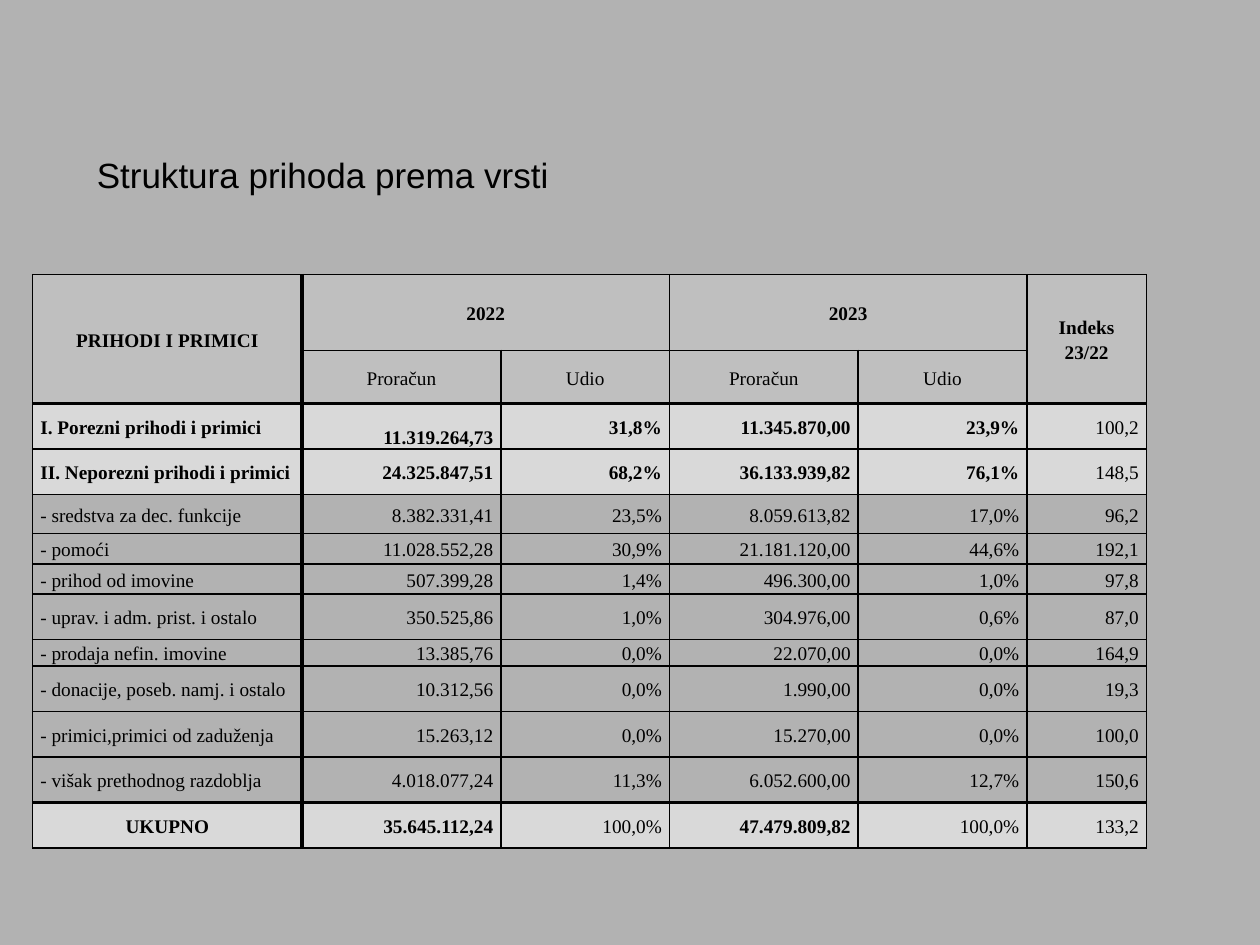
from lxml.etree import SubElement
from pptx import Presentation
from pptx.dml.color import RGBColor
from pptx.enum.text import MSO_ANCHOR as Anchor, PP_ALIGN as Align
from pptx.oxml.ns import qn
from pptx.util import Inches, Pt

WIDE, HIGH = Inches(10), Inches(7.5)
BACK, HEAD, BAND, INK = "B2B2B2", "BFBFBF", "D9D9D9", "000000"
THIN, THICK = 1, 2.25

COLS = [2.14, 1.58, 1.34, 1.5, 1.34, 0.95]
ROWS = [0.6, 0.26, 0.36, 0.36, 0.31, 0.24, 0.24, 0.36, 0.2] + [0.36] * 4
SPANS = [(0, 0, 1, 0), (0, 1, 0, 2), (0, 3, 0, 4), (0, 5, 1, 5)]
DATA = [
    ["PRIHODI I PRIMICI", "2022", "", "2023", "", "Indeks 23/22"],
    ["", "Proračun", "Udio", "Proračun", "Udio", ""],
    ["I. Porezni prihodi i primici", "11.319.264,73", "31,8%", "11.345.870,00", "23,9%", "100,2"],
    ["II. Neporezni prihodi i primici", "24.325.847,51", "68,2%", "36.133.939,82", "76,1%", "148,5"],
    ["- sredstva za dec. funkcije", "8.382.331,41", "23,5%", "8.059.613,82", "17,0%", "96,2"],
    ["- pomoći", "11.028.552,28", "30,9%", "21.181.120,00", "44,6%", "192,1"],
    ["- prihod od imovine", "507.399,28", "1,4%", "496.300,00", "1,0%", "97,8"],
    ["- uprav. i adm. prist. i ostalo", "350.525,86", "1,0%", "304.976,00", "0,6%", "87,0"],
    ["- prodaja nefin. imovine", "13.385,76", "0,0%", "22.070,00", "0,0%", "164,9"],
    ["- donacije, poseb. namj. i ostalo", "10.312,56", "0,0%", "1.990,00", "0,0%", "19,3"],
    ["- primici,primici od zaduženja", "15.263,12", "0,0%", "15.270,00", "0,0%", "100,0"],
    ["- višak prethodnog razdoblja", "4.018.077,24", "11,3%", "6.052.600,00", "12,7%", "150,6"],
    ["UKUPNO", "35.645.112,24", "100,0%", "47.479.809,82", "100,0%", "133,2"],
]
LAST = len(DATA) - 1
# Columns set in bold, by row
BOLD = {0: range(6), 2: range(5), 3: range(5), LAST: (0, 1, 3)}


def color(code):
    return RGBColor.from_string(code)


def style(para, font, size, bold=False):
    for run in para.runs:
        run.font.name, run.font.size, run.font.bold = font, Pt(size), bold
        run.font.color.rgb = color(INK)


def edge(cell, side, width):
    line = SubElement(cell._tc.get_or_add_tcPr(), qn("a:ln" + side), w=str(Pt(width)))
    fill = SubElement(line, qn("a:solidFill"))
    SubElement(fill, qn("a:srgbClr"), val=INK)


def rule(cell, row, col):
    """Heavy rules: beside the labels, below the header, above the total."""
    end = row + cell.span_height - 1
    heavy = {"L": col == 1, "R": col == 0,
             "T": row in (2, LAST), "B": end in (1, LAST - 1)}
    for side, thick in heavy.items():
        edge(cell, side, THICK if thick else THIN)


def shade(cell, row):
    if row < 2 or row in (2, 3, LAST):
        cell.fill.solid()
        cell.fill.fore_color.rgb = color(HEAD if row < 2 else BAND)
    else:
        cell.fill.background()


def write(cell, row, col):
    cell.text_frame.text = DATA[row][col]
    cell.margin_left = cell.margin_right = Inches(0.06)
    cell.margin_top = cell.margin_bottom = 0
    # The first budget figure sits on the bottom of its cell
    cell.vertical_anchor = Anchor.BOTTOM if (row, col) == (2, 1) else Anchor.MIDDLE
    para = cell.text_frame.paragraphs[0]
    para.line_spacing = 1.15
    if row < 2 or (row, col) == (LAST, 0):
        para.alignment = Align.CENTER
    else:
        para.alignment = Align.RIGHT if col else Align.LEFT
    style(para, "Times New Roman", 11, col in BOLD.get(row, ()))


def add_title(slide, box):
    frame = slide.shapes.add_textbox(*box).text_frame
    frame.word_wrap = True
    frame.margin_top = Inches(0.07)
    frame.text = "Struktura prihoda prema vrsti"
    style(frame.paragraphs[0], "Arial", 20)


def add_grid(slide, box):
    table = slide.shapes.add_table(len(ROWS), len(COLS), *box).table
    table.first_row = table.horz_banding = False
    # Share the box out among columns and rows
    for col, part in zip(table.columns, COLS):
        col.width = int(box[2] * part / sum(COLS))
    for row, part in zip(table.rows, ROWS):
        row.height = int(box[3] * part / sum(ROWS))
    for top, left, low, right in SPANS:
        table.cell(top, left).merge(table.cell(low, right))
    for row in range(len(ROWS)):
        for col in range(len(COLS)):
            cell = table.cell(row, col)
            if not cell.is_spanned:
                rule(cell, row, col)
                shade(cell, row)
                write(cell, row, col)


def area(left, top, width, height):
    """Box from percentages of the slide's size."""
    return [int(part * size / 100) for part, size in
            zip((left, top, width, height), (WIDE, HIGH, WIDE, HIGH))]


def main():
    deck = Presentation()
    deck.slide_width, deck.slide_height = WIDE, HIGH
    slide = deck.slides.add_slide(deck.slide_layouts[6])
    slide.background.fill.solid()
    slide.background.fill.fore_color.rgb = color(BACK)
    add_title(slide, area(6.7, 15.33, 90, 9.47))
    add_grid(slide, area(2.6, 29.07, 88.4, 58.4))
    deck.save("out.pptx")


if __name__ == "__main__":
    main()
